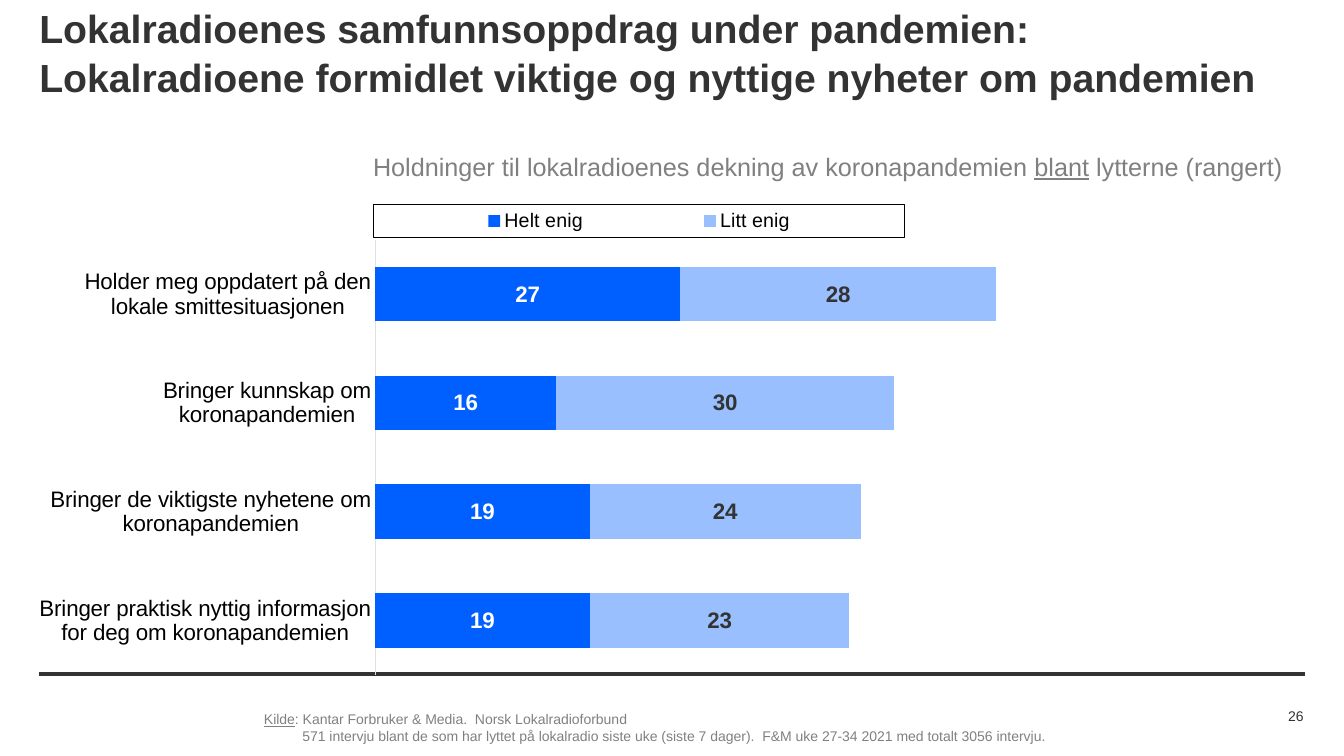
import lxml.etree
import pptx
import pptx.chart.data
import pptx.dml.color
import pptx.enum.chart
import pptx.enum.shapes
import pptx.enum.text
import pptx.oxml
import pptx.oxml.ns
import pptx.util
from pptx.util import Inches

DARK, GREY, BLACK = "333333", "808080", "000000"
CATEGORIES = [
    "Bringer praktisk nyttig informasjon for deg om koronapandemien",
    "Bringer de viktigste nyhetene om koronapandemien",
    "Bringer kunnskap om koronapandemien",
    "Holder meg oppdatert på den lokale smittesituasjonen",
]
SERIES = [
    ("Helt enig", (19, 19, 16, 27), "0060FF", "FFFFFF"),
    ("Litt enig", (23, 24, 30, 28), "99BFFF", DARK),
]


def color(value):
    return pptx.dml.color.RGBColor.from_string(value)


def style_font(font, size, value, bold=False):
    font.name = "Arial"
    font.size = pptx.util.Pt(size)
    font.bold = bold
    font.color.rgb = color(value)


def add_rule(page, left, right, top):
    rule = page.shapes.add_connector(
        pptx.enum.shapes.MSO_CONNECTOR.STRAIGHT,
        Inches(left), Inches(top), Inches(right), Inches(top))
    rule.line.color.rgb = color(DARK)
    rule.line.width = pptx.util.Pt(3)
    properties = rule._element.spPr
    lxml.etree.SubElement(properties, pptx.oxml.ns.qn("a:effectLst"))


def format_title(page, text):
    title = page.shapes.title
    title.left, title.top = Inches(0.39), Inches(0.02)
    title.width, title.height = Inches(12.94), Inches(1)
    frame = title.text_frame
    clear_margins(frame)
    frame.vertical_anchor = pptx.enum.text.MSO_ANCHOR.TOP
    frame.text = text
    para = frame.paragraphs[0]
    para.alignment = pptx.enum.text.PP_ALIGN.LEFT
    para.line_spacing = 1.04
    style_font(para.font, 28, DARK, True)


def clear_margins(frame):
    frame.margin_left = frame.margin_right = 0
    frame.margin_top = frame.margin_bottom = 0


def add_text(page, place, lines, size, value):
    box = page.shapes.add_textbox(*map(Inches, place))
    frame = box.text_frame
    for index, line in enumerate(lines):
        para = frame.add_paragraph() if index else frame.paragraphs[0]
        for text, underlined in line:
            span = para.add_run()
            span.text = text
            if underlined:
                span.font.underline = True
        style_font(para.font, size, value)
    return frame


def set_layout(parent, index, place):
    for old in parent.findall(pptx.oxml.ns.qn("c:layout")):
        parent.remove(old)
    target = '<c:layoutTarget val="inner"/>' if index == 0 else ""
    modes = "".join(f'<c:{axis}Mode val="edge"/>' for axis in "xy")
    sizes = "".join(f'<c:{key} val="{part}"/>' for key, part in zip("xywh", place))
    parent.insert(index, pptx.oxml.parse_xml(
        f'<c:layout {pptx.oxml.ns.nsdecls("c")}><c:manualLayout>'
        f"{target}{modes}{sizes}</c:manualLayout></c:layout>"))


def format_legend(chart):
    chart.has_legend = True
    legend = chart.legend
    legend.position = pptx.enum.chart.XL_LEGEND_POSITION.TOP
    legend.include_in_layout = False
    style_font(legend.font, 14, BLACK)
    set_layout(legend._element, 1, (0.264, 0.045, 0.42, 0.067))
    legend._element.find(pptx.oxml.ns.qn("c:overlay")).addnext(pptx.oxml.parse_xml(
        f'<c:spPr {pptx.oxml.ns.nsdecls("c", "a")}><a:ln w="9525"><a:solidFill>'
        f'<a:srgbClr val="{BLACK}"/></a:solidFill></a:ln></c:spPr>'))


def format_axes(chart):
    names = chart.category_axis
    names.major_tick_mark = pptx.enum.chart.XL_TICK_MARK.NONE
    names.has_major_gridlines = False
    names.format.line.color.rgb = color("E0E0E0")
    names.format.line.width = pptx.util.Pt(0.75)
    style_font(names.tick_labels.font, 16, BLACK)
    values = chart.value_axis
    values.minimum_scale, values.maximum_scale = 0, 80
    values.major_unit = 25
    values.has_major_gridlines = False
    values.visible = False


def format_series(series, fill, label_color):
    series.format.fill.solid()
    series.format.fill.fore_color.rgb = color(fill)
    labels = series.data_labels
    labels.show_value = True
    labels.number_format = "#,##0"
    labels.number_format_is_linked = False
    style_font(labels.font, 16, label_color, True)


def add_bar_chart(page):
    data = pptx.chart.data.CategoryChartData()
    data.categories = CATEGORIES
    for name, values, _, _ in SERIES:
        data.add_series(name, values)
    chart = page.shapes.add_chart(
        pptx.enum.chart.XL_CHART_TYPE.BAR_STACKED,
        Inches(0.39), Inches(1.8), Inches(12.54), Inches(4.99), data).chart
    chart.has_title = False
    style_font(chart.font, 10, DARK)
    plot = chart.plots[0]
    plot.gap_width = plot.overlap = 100
    plot.vary_by_categories = False
    for series, (_, _, fill, label_color) in zip(plot.series, SERIES):
        format_series(series, fill, label_color)
    format_axes(chart)
    format_legend(chart)
    set_layout(chart._chartSpace.chart.plotArea, 0, (0.265, 0.116, 0.715, 0.865))


def add_source(page):
    frame = add_text(page, (2.52, 7, 7.97, 0.44), [
        [("Kilde", True),
         (": Kantar Forbruker & Media.  Norsk Lokalradioforbund", False)],
        [("571 intervju blant de som har lyttet på lokalradio siste uke (siste 7 dager).  "
          "F&M uke 27-34 2021 med totalt 3056 intervju.", False)],
    ], 10, GREY)
    frame.word_wrap = False
    properties = frame.paragraphs[1]._p.get_or_add_pPr()
    properties.set("marL", str(Inches(0.38)))
    properties.set("indent", "0")


def add_page_number(page, number):
    frame = add_text(page, (11.87, 6.99, 1.06, 0.22), [[(number, False)]], 10, DARK)
    clear_margins(frame)
    frame.word_wrap = True
    frame.vertical_anchor = pptx.enum.text.MSO_ANCHOR.MIDDLE
    frame.paragraphs[0].alignment = pptx.enum.text.PP_ALIGN.RIGHT


def main():
    deck = pptx.Presentation()
    deck.slide_width, deck.slide_height = Inches(13.33), Inches(7.5)
    page = deck.slides.add_slide(deck.slide_layouts.get_by_name("Title Only"))
    add_rule(page, 0.39, 12.94, 6.69)
    format_title(page, "Lokalradioenes samfunnsoppdrag under pandemien:\v"
                       "Lokalradioene formidlet viktige og nyttige nyheter om pandemien")
    subtitle = add_text(page, (3.7, 1.5, 9.3, 0.3), [[
        ("Holdninger til lokalradioenes dekning av koronapandemien ", False),
        ("blant", True), (" lytterne (rangert)", False)]], 18, GREY)
    clear_margins(subtitle)
    subtitle.word_wrap = True
    add_bar_chart(page)
    add_source(page)
    add_page_number(page, "26")
    deck.save("out.pptx")


if __name__ == "__main__":
    main()
